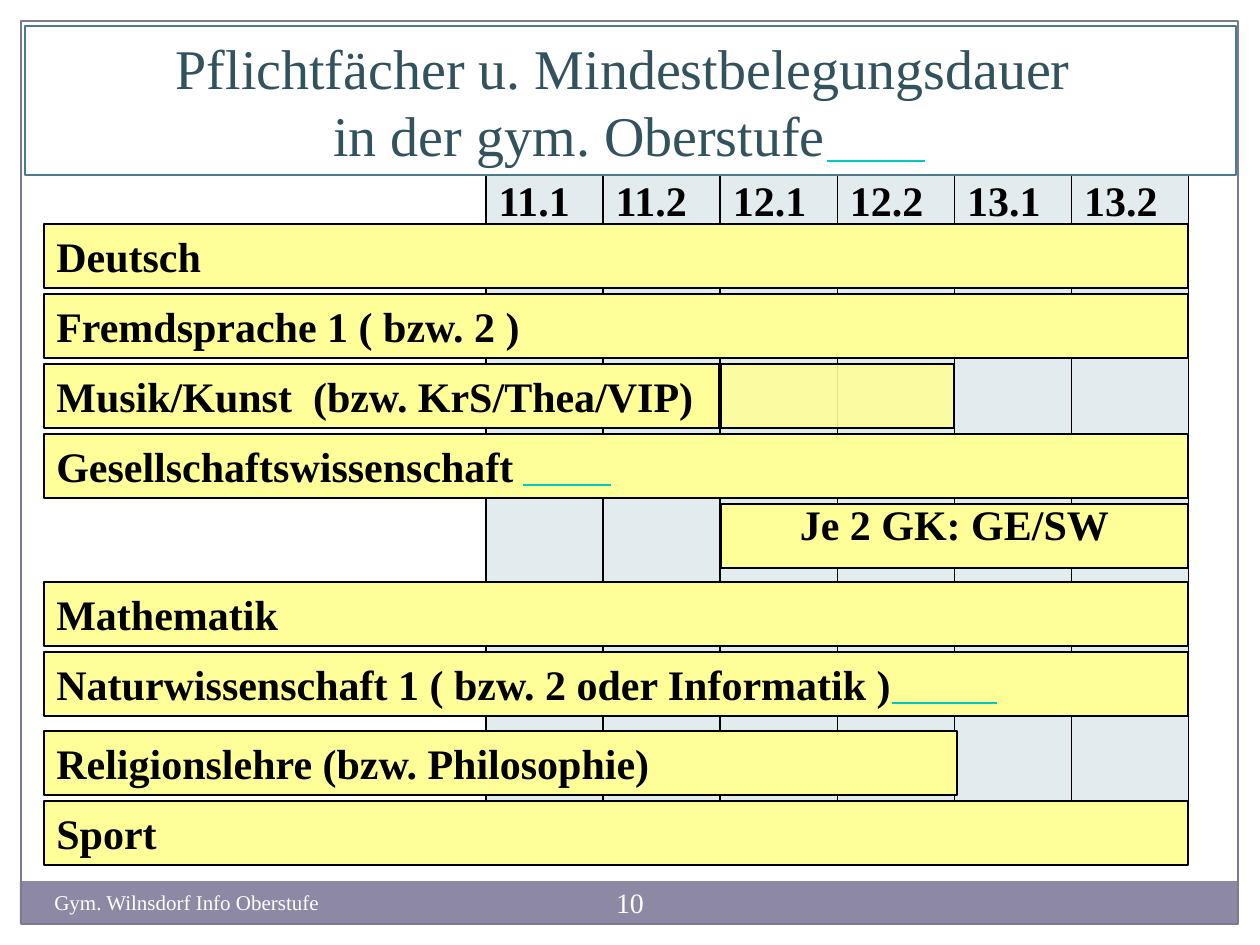
"""Build the slide on compulsory subjects and their minimum duration."""
import dataclasses

import lxml.etree
import pptx
import pptx.dml.color
import pptx.enum.shapes
import pptx.enum.text
import pptx.oxml.ns
import pptx.util

ALIGN = pptx.enum.text.PP_ALIGN
ANCHOR = pptx.enum.text.MSO_ANCHOR
QN = pptx.oxml.ns.qn


@dataclasses.dataclass(frozen=True)
class Theme:
    font: str = "Times New Roman"
    ink: str = "000000"
    paper: str = "FFFFFF"
    bar: str = "FFFF99"
    grid: str = "E2ECEF"
    title: str = "32525D"
    title_edge: str = "4C7C8B"
    frame: str = "7C7991"
    band: str = "8D89A4"
    accent: str = "00C8C3"
    title_size: int = 32
    body_size: int = 24
    number_size: int = 16
    footer_size: int = 12


def px(length):
    return pptx.util.Emu(round(length * 914400 / 126))


def rgb(value):
    return pptx.dml.color.RGBColor.from_string(value)


def write(paragraph, text, *, font, size, color, bold=False, align=ALIGN.LEFT, spacing=None):
    paragraph.alignment = align
    if spacing:
        paragraph.line_spacing = spacing
    run = paragraph.add_run()
    run.text = text
    run.font.name = font
    run.font.size = pptx.util.Pt(size)
    run.font.bold = bold
    run.font.color.rgb = rgb(color)


class SlideBuilder:
    def __init__(self, slide, theme):
        self.slide = slide
        self.theme = theme

    def box(self, left, top, width, height, fill=None, line=None, opacity=None):
        box = self.slide.shapes.add_shape(
            pptx.enum.shapes.MSO_SHAPE.RECTANGLE, px(left), px(top), px(width), px(height))
        box.shadow.inherit = False
        if fill:
            box.fill.solid()
            box.fill.fore_color.rgb = rgb(fill)
        else:
            box.fill.background()
        if opacity:
            color = box._element.spPr.find(".//" + QN("a:srgbClr"))
            lxml.etree.SubElement(color, QN("a:alpha"), val=str(opacity * 1000))
        if line:
            box.line.color.rgb = rgb(line)
            box.line.width = pptx.util.Pt(0.75)
        else:
            box.line.fill.background()
        return box

    def bar(self, left, top, width, label="", opacity=None, anchor=ANCHOR.MIDDLE, **form):
        bar = self.box(left, top, width, 64, self.theme.bar, self.theme.ink, opacity)
        if label:
            bar.text_frame.word_wrap = True
            bar.text_frame.vertical_anchor = anchor
            write(bar.text_frame.paragraphs[0], label, font=self.theme.font,
                  size=self.theme.body_size, color=self.theme.ink, bold=True, **form)

    def title(self, first, second, second_indent):
        heading = self.box(25, 26, 1211, 149, self.theme.paper, self.theme.title_edge)
        frame = heading.text_frame
        frame.word_wrap = True
        frame.vertical_anchor = ANCHOR.MIDDLE
        style = dict(font=self.theme.font, size=self.theme.title_size, color=self.theme.title)
        write(frame.paragraphs[0], first, align=ALIGN.CENTER, **style)
        shifted = frame.add_paragraph()
        shifted._p.get_or_add_pPr().set("marL", str(px(second_indent)))
        write(shifted, second, **style)

    def label(self, left, top, width, height, text, size, anchor, align=ALIGN.LEFT):
        label = self.slide.shapes.add_textbox(px(left), px(top), px(width), px(height))
        label.text_frame.word_wrap = True
        label.text_frame.vertical_anchor = anchor
        write(label.text_frame.paragraphs[0], text, font=self.theme.font, size=size,
              color=self.theme.paper, align=align)

    def rule(self, left, right, y, weight):
        rule = self.slide.shapes.add_connector(
            pptx.enum.shapes.MSO_CONNECTOR.STRAIGHT, px(left), px(y), px(right), px(y))
        rule.line.color.rgb = rgb(self.theme.accent)
        rule.line.width = pptx.util.Pt(weight)
        lxml.etree.SubElement(rule._element.spPr, QN("a:effectLst"))

    def cell_borders(self, cell, visible):
        properties = cell._tc.get_or_add_tcPr()
        for index, side in enumerate("LRTB"):
            edge = lxml.etree.Element(QN("a:ln" + side), w=str(pptx.util.Pt(1)))
            if side in visible:
                fill = lxml.etree.SubElement(edge, QN("a:solidFill"))
                lxml.etree.SubElement(fill, QN("a:srgbClr"), val=self.theme.ink)
            else:
                lxml.etree.SubElement(edge, QN("a:noFill"))
            properties.insert(index, edge)

    def term_grid(self, left, top, width, terms, heights):
        last = len(heights) - 1
        grid = self.slide.shapes.add_table(
            len(heights), len(terms), px(left), px(top), px(width), px(sum(heights))).table
        for column in grid.columns:
            column.width = px(width / len(terms))
        for row, height in enumerate(heights):
            grid.rows[row].height = px(height)
            for column, term in enumerate(terms):
                cell = grid.cell(row, column)
                cell.fill.solid()
                cell.fill.fore_color.rgb = rgb(self.theme.grid)
                self.cell_borders(cell, "LR" + "T" * (row == 0) + "B" * (row == last))
                if row == 0:
                    cell.vertical_anchor = ANCHOR.MIDDLE
                    write(cell.text_frame.paragraphs[0], term, font=self.theme.font,
                          size=self.theme.body_size, color=self.theme.ink, bold=True)
        for column in range(2):
            grid.cell(2, column).merge(grid.cell(3, column))


def main():
    deck = pptx.Presentation()
    deck.slide_width, deck.slide_height = px(1260), px(945)
    theme = Theme()
    page = SlideBuilder(deck.slides.add_slide(deck.slide_layouts[6]), theme)

    page.box(20, 881, 1218, 43, fill=theme.band)
    page.box(21, 21, 1217, 903, line=theme.frame)
    terms = [f"{year}.{half}" for year in (11, 12, 13) for half in (1, 2)]
    page.term_grid(486, 173, 703, terms, [59] + [67] * 9)

    full, first_row, second_row, step = 1144, 224, 582, 70
    subjects = [
        (first_row, full, "Deutsch"),
        (first_row + step, full, "Fremdsprache 1 ( bzw. 2 )"),
        (first_row + 2 * step, 675, "Musik/Kunst  (bzw. KrS/Thea/VIP)"),
        (first_row + 3 * step, full, "Gesellschaftswissenschaft"),
        (second_row, full, "Mathematik"),
        (second_row + step, full, "Naturwissenschaft 1 ( bzw. 2 oder Informatik )"),
        (731, 913, "Religionslehre (bzw. Philosophie)"),
        (731 + step, full, "Sport"),
    ]
    for top, width, subject in subjects:
        page.bar(44, top, width, subject)
    page.bar(721, first_row + 2 * step, 233, opacity=89)
    page.bar(721, first_row + 4 * step, 467, "Je 2 GK: GE/SW",
             anchor=ANCHOR.TOP, align=ALIGN.CENTER, spacing=0.75)

    page.title("Pflichtfächer u. Mindestbelegungsdauer ", "in der gym. Oberstufe", 296)
    for left, right, y, weight in [(827, 925, 161, 1.5), (523, 611, 485, 1), (892, 997, 703, 1)]:
        page.rule(left, right, y, weight)

    page.label(588, 872, 84, 60, "10", theme.number_size, ANCHOR.MIDDLE, ALIGN.CENTER)
    page.label(42, 883, 494, 50, "Gym. Wilnsdorf Info Oberstufe", theme.footer_size, ANCHOR.TOP)
    deck.save("out.pptx")


if __name__ == "__main__":
    main()
